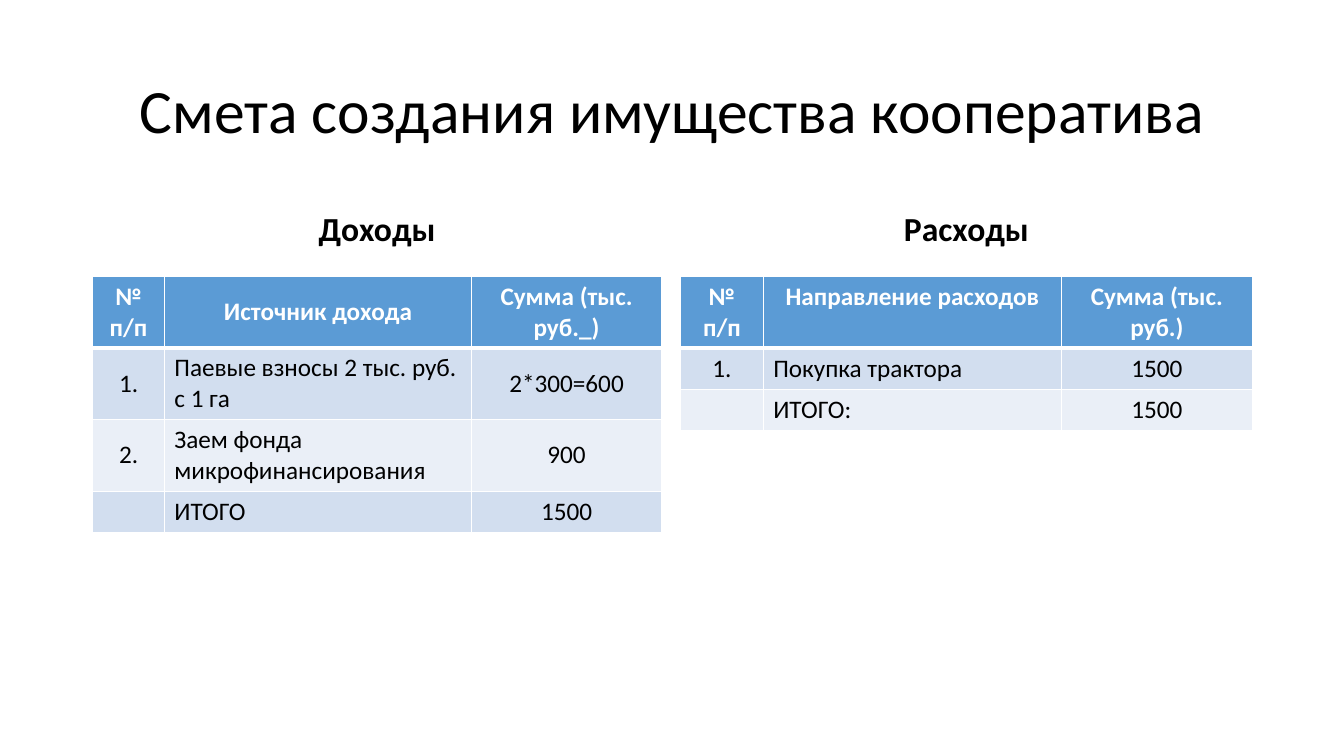
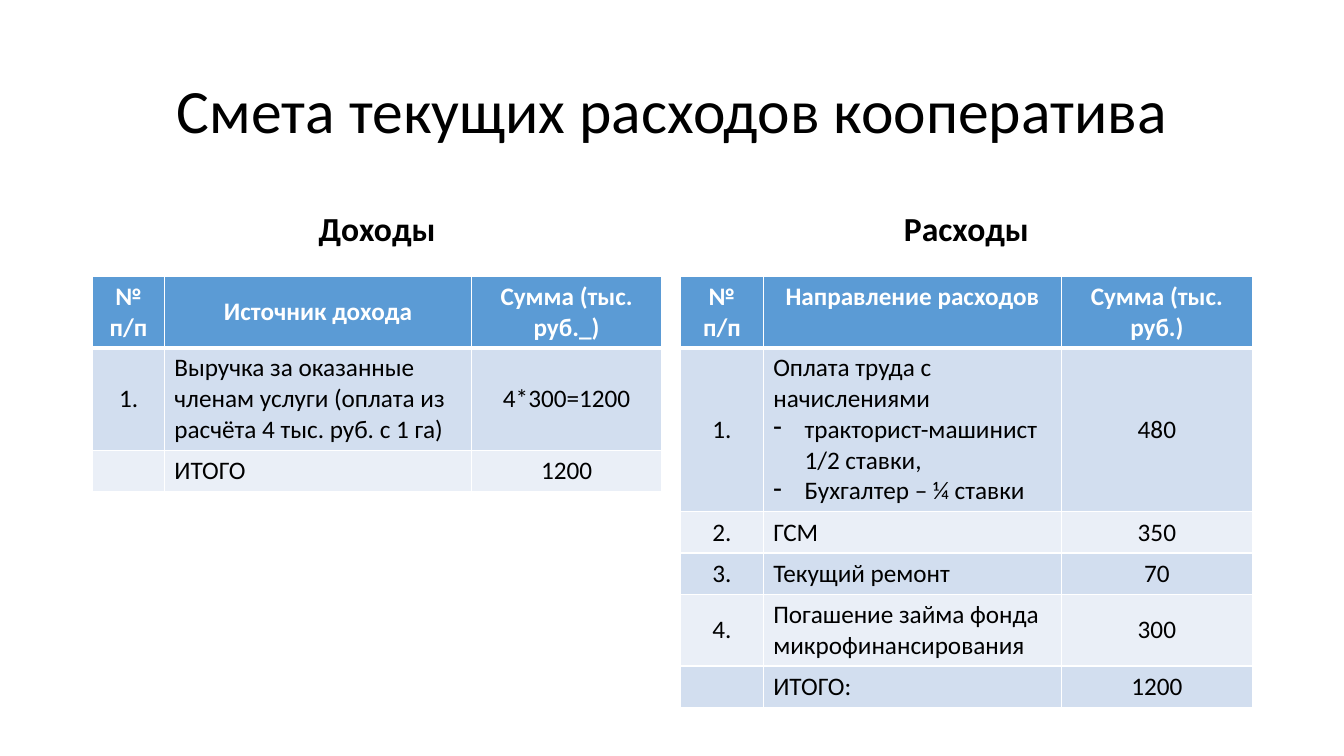
from lxml import etree
from pptx import Presentation
from pptx.dml.color import RGBColor
from pptx.enum.text import MSO_ANCHOR, MSO_AUTO_SIZE, PP_ALIGN
from pptx.oxml.ns import qn
from pptx.util import Inches, Pt

# Shared style
FONT = "Calibri"
BLACK = RGBColor(0x00, 0x00, 0x00)
WHITE = RGBColor(0xFF, 0xFF, 0xFF)
HEADER_BLUE = RGBColor(0x5B, 0x9B, 0xD5)
BANDS = (RGBColor(0xD2, 0xDE, 0xEF), RGBColor(0xEA, 0xEF, 0xF7))

COMPARISON_LAYOUT = 4
HEADING_TOP, HEADING_HEIGHT = 1.84, 0.9
TABLE_TOP = HEADING_TOP + HEADING_HEIGHT
ROW_HEIGHT = 0.41
BULLET = "- "
BULLET_INDENT = Inches(0.31)

# The two halves of every estimate: left edge, columns and header row
INCOME = {
    "heading": "Доходы", "placeholder": 1, "left": 0.92,
    "columns": (0.71, 3.05, 1.88), "header_anchor": MSO_ANCHOR.MIDDLE,
    "header": ("№ п/п", "Источник дохода", "Сумма (тыс. руб._)"),
}
EXPENSES = {
    "heading": "Расходы", "placeholder": 3, "left": 6.75,
    "columns": (0.82, 2.96, 1.89), "header_anchor": MSO_ANCHOR.TOP,
    "header": ("№ п/п", "Направление расходов", "Сумма (тыс. руб.)"),
}


class EstimateDeck:
    """Holds the presentation, its style and the current slide."""

    def __init__(self):
        self.deck = Presentation()
        self.deck.slide_width = Inches(13.33)
        self.deck.slide_height = Inches(7.5)
        self.page = None

    def add_page(self, title):
        layout = self.deck.slide_layouts[COMPARISON_LAYOUT]
        self.page = self.deck.slides.add_slide(layout)
        self.fill_placeholder(0, title, (0.92, 0.4, 11.5, 1.45), 44, False)

    def fill_placeholder(self, index, text, place, size, bold):
        box = self.page.placeholders[index]
        box.left, box.top, box.width, box.height = map(Inches, place)
        frame = box.text_frame
        frame.text = text
        frame.auto_size = MSO_AUTO_SIZE.NONE
        frame.vertical_anchor = MSO_ANCHOR.MIDDLE
        paragraph = frame.paragraphs[0]
        paragraph.line_spacing = 0.9
        paragraph.space_before = Pt(0)
        self.format_paragraph(paragraph, PP_ALIGN.CENTER, size, BLACK, bold)

    def format_paragraph(self, paragraph, align, size, color, bold):
        paragraph.alignment = align
        for span in paragraph.runs:
            span.font.name = FONT
            span.font.size = Pt(size)
            span.font.bold = bold
            span.font.color.rgb = color

    def add_side(self, side, rows):
        """Adds a heading with its table below."""
        width = sum(side["columns"])
        place = (side["left"], HEADING_TOP, width, HEADING_HEIGHT)
        self.fill_placeholder(side["placeholder"], side["heading"], place, 24, True)

        lines = [side["header"], *rows]
        frame = self.page.shapes.add_table(
            len(lines), len(side["columns"]), Inches(side["left"]),
            Inches(TABLE_TOP), Inches(width), Inches(ROW_HEIGHT * len(lines)))
        table = frame.table
        for column, column_width in zip(table.columns, side["columns"]):
            column.width = Inches(column_width)
        for row_index, line in enumerate(lines):
            table.rows[row_index].height = Inches(ROW_HEIGHT)
            for column_index, text in enumerate(line):
                cell = table.cell(row_index, column_index)
                self.format_cell(cell, text, row_index, column_index, side)

    def format_cell(self, cell, text, row_index, column_index, side):
        is_header = row_index == 0
        self.set_borders(cell, top=3 if row_index == 1 else 1,
                         bottom=3 if is_header else 1)
        cell.fill.solid()
        cell.fill.fore_color.rgb = (
            HEADER_BLUE if is_header else BANDS[(row_index - 1) % 2])
        cell.vertical_anchor = (
            side["header_anchor"] if is_header else MSO_ANCHOR.MIDDLE)
        cell.text_frame.text = text

        is_label = column_index == 1 and not is_header
        align = PP_ALIGN.LEFT if is_label else PP_ALIGN.CENTER
        color = WHITE if is_header else BLACK
        for paragraph in cell.text_frame.paragraphs:
            if paragraph.text.startswith(BULLET):
                paragraph.text = paragraph.text.removeprefix(BULLET)
                self.set_bullet(paragraph)
            self.format_paragraph(paragraph, align, 18, color, is_header)

    def set_borders(self, cell, top, bottom):
        properties = cell._tc.get_or_add_tcPr()
        widths = {"a:lnL": 1, "a:lnR": 1, "a:lnT": top, "a:lnB": bottom}
        for tag, width in widths.items():
            line = etree.SubElement(properties, qn(tag), w=str(Pt(width)))
            fill = etree.SubElement(line, qn("a:solidFill"))
            etree.SubElement(fill, qn("a:srgbClr"), val=str(WHITE))

    def set_bullet(self, paragraph):
        properties = paragraph._p.get_or_add_pPr()
        properties.set("marL", str(BULLET_INDENT))
        properties.set("indent", str(-BULLET_INDENT))
        etree.SubElement(properties, qn("a:buChar"), char=BULLET.strip())

    def remove_empty_placeholders(self):
        for box in list(self.page.placeholders):
            if box.has_text_frame and not box.text_frame.text:
                box.element.getparent().remove(box.element)

    def add_estimate(self, title, income, expenses):
        self.add_page(title)
        self.add_side(INCOME, income)
        self.add_side(EXPENSES, expenses)
        self.remove_empty_placeholders()


def main():
    estimates = EstimateDeck()

    # Property estimate
    estimates.add_estimate(
        "Смета создания имущества кооператива",
        income=[
            ("1.", "Паевые взносы 2 тыс. руб. с 1 га", "2*300=600"),
            ("2.", "Заем фонда микрофинансирования", "900"),
            ("", "ИТОГО", "1500"),
        ],
        expenses=[
            ("1.", "Покупка трактора", "1500"),
            ("", "ИТОГО:", "1500"),
        ])

    # Running costs estimate
    estimates.add_estimate(
        "Смета текущих расходов кооператива",
        income=[
            ("1.", "Выручка за оказанные членам услуги "
                   "(оплата из расчёта 4 тыс. руб. с 1 га)", "4*300=1200"),
            ("", "ИТОГО", "1200"),
        ],
        expenses=[
            ("1.", "Оплата труда с начислениями\n"
                   "- тракторист-машинист 1/2 ставки,\n"
                   "- Бухгалтер – ¼ ставки", "480"),
            ("2.", "ГСМ", "350"),
            ("3.", "Текущий ремонт", "70"),
            ("4.", "Погашение займа фонда микрофинансирования", "300"),
            ("", "ИТОГО:", "1200"),
        ])

    estimates.deck.save("out.pptx")


if __name__ == "__main__":
    main()
